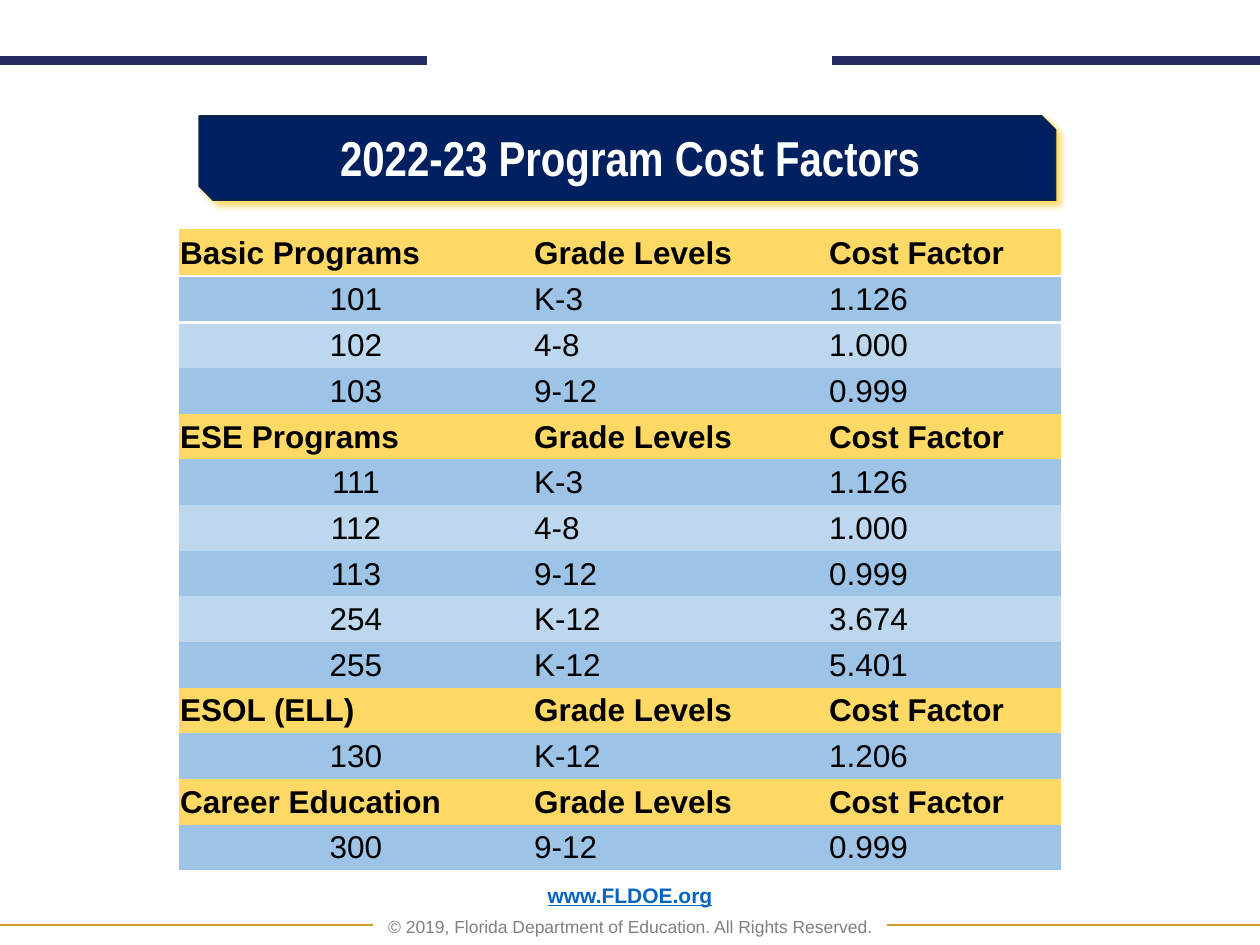
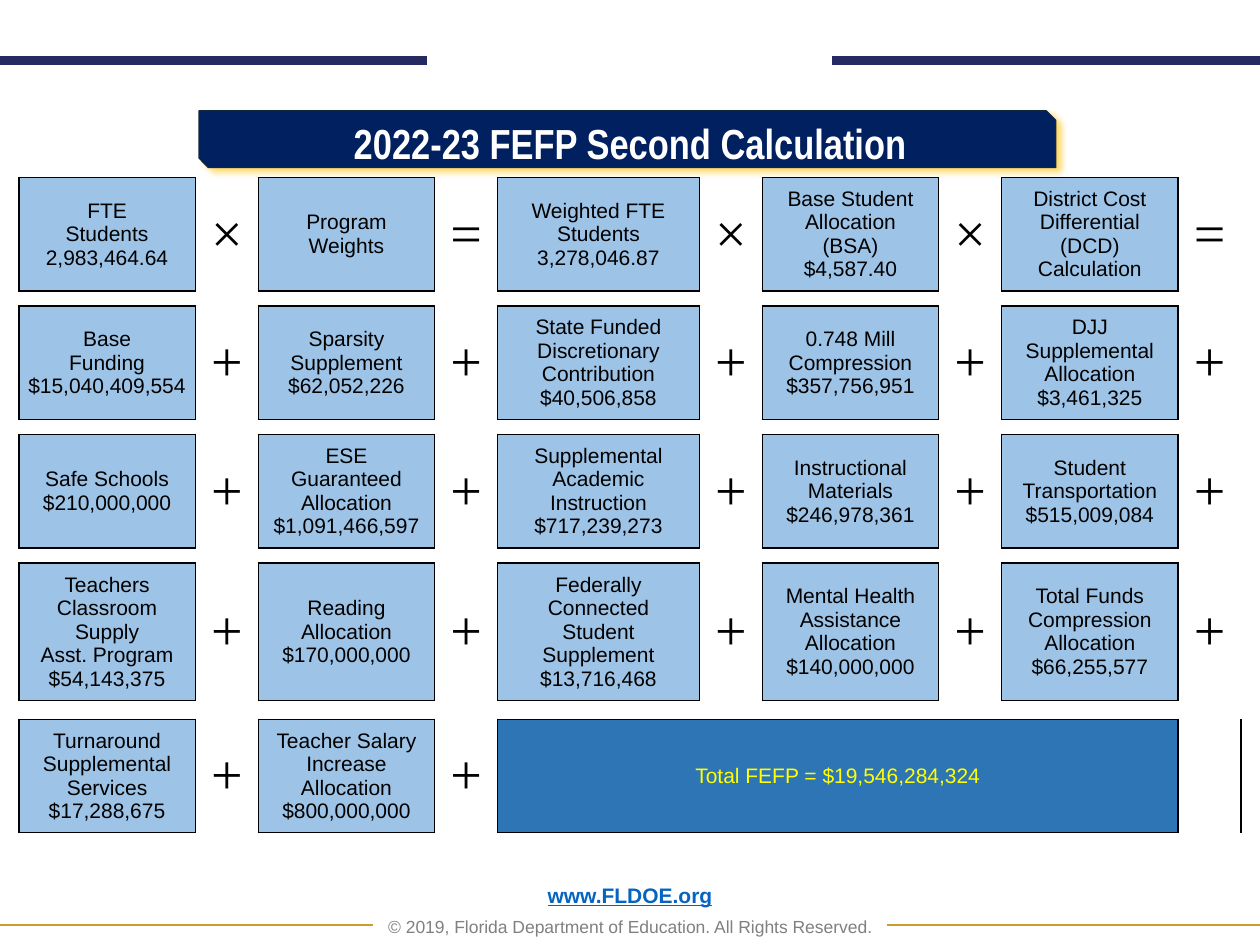
from dataclasses import dataclass
from typing import Optional

import lxml.etree
import pptx
import pptx.dml.color
import pptx.enum.shapes
import pptx.enum.text
import pptx.oxml.ns
import pptx.presentation
import pptx.shapes.graphfrm
import pptx.slide
import pptx.table
import pptx.text.text
import pptx.util

Inches = pptx.util.Inches
Pt = pptx.util.Pt
qn = pptx.oxml.ns.qn
CENTER = pptx.enum.text.PP_ALIGN.CENTER
LEFT = pptx.enum.text.PP_ALIGN.LEFT
NO_STYLE_NO_GRID = "{2D5ABB26-0587-4C30-8999-92F81FD0307C}"


@dataclass(frozen=True)
class Theme:
    navy: str = "002060"
    banner_edge: str = "0F273D"
    band: str = "262A63"
    gold_rule: str = "CD9D2C"
    gold: str = "FFD966"
    blue: str = "9DC3E6"
    pale_blue: str = "BDD7EE"
    total_blue: str = "2E75B6"
    yellow: str = "FFFF00"
    link: str = "0563C1"
    grey: str = "808080"
    black: str = "000000"
    white: str = "FFFFFF"
    body_font: str = "Arial"
    title_font: str = "Arial Narrow"
    operator_font: str = "Times New Roman"
    factor_size: float = 18
    box_size: float = 12
    operator_size: float = 32
    site_size: float = 12
    copyright_size: float = 10


THEME = Theme()


@dataclass(frozen=True)
class TextStyle:
    size: float
    color: str = THEME.black
    font: str = THEME.body_font
    bold: bool = False
    underline: bool = False


@dataclass(frozen=True)
class Rule:
    start: float
    end: float
    y: float
    color: str
    weight: float


@dataclass(frozen=True)
class Banner:
    title: str
    size: float
    top: float
    height: float
    text_top: float
    text_height: float


@dataclass(frozen=True)
class ProgramGroup:
    name: str
    factors: tuple[tuple[str, str, str], ...]


@dataclass(frozen=True)
class Term:
    """One box of the calculation and the operator that follows it."""
    text: str
    operator: str = "+"
    side_margin: float = 0.1


RULES = (
    Rule(0, 3.39, 0.48, THEME.band, 5),
    Rule(6.6, 10, 0.48, THEME.band, 5),
    Rule(0, 2.96, 7.34, THEME.gold_rule, 1),
    Rule(7.04, 10, 7.34, THEME.gold_rule, 1),
)

PROGRAM_GROUPS = (
    ProgramGroup("Basic Programs", (
        ("101", "K-3", "1.126"), ("102", "4-8", "1.000"), ("103", "9-12", "0.999"))),
    ProgramGroup("ESE Programs", (
        ("111", "K-3", "1.126"), ("112", "4-8", "1.000"), ("113", "9-12", "0.999"),
        ("254", "K-12", "3.674"), ("255", "K-12", "5.401"))),
    ProgramGroup("ESOL (ELL)", (("130", "K-12", "1.206"),)),
    ProgramGroup("Career Education", (("300", "9-12", "0.999"),)),
)

CALCULATION = (
    (Term("FTE\nStudents 2,983,464.64", "×"),
     Term("Program\nWeights", "="),
     Term("Weighted FTE\nStudents\n3,278,046.87", "×"),
     Term("Base Student Allocation (BSA)\n$4,587.40", "×"),
     Term("District Cost Differential (DCD) Calculation", "=")),
    (Term("Base\nFunding\n$15,040,409,554", side_margin=0.07),
     Term("Sparsity Supplement $62,052,226"),
     Term("State Funded Discretionary Contribution $40,506,858"),
     Term("0.748 Mill Compression $357,756,951"),
     Term("DJJ Supplemental Allocation $3,461,325")),
    (Term("Safe Schools $210,000,000"),
     Term("ESE Guaranteed Allocation $1,091,466,597"),
     Term("Supplemental Academic Instruction $717,239,273"),
     Term("Instructional Materials $246,978,361"),
     Term("Student Transportation $515,009,084")),
    (Term("Teachers Classroom Supply\nAsst. Program\n$54,143,375"),
     Term("Reading\nAllocation $170,000,000"),
     Term("Federally Connected Student Supplement\n$13,716,468"),
     Term("Mental Health Assistance Allocation\n$140,000,000"),
     Term("Total Funds Compression Allocation\n$66,255,577")),
    (Term("Turnaround Supplemental Services $17,288,675"),
     Term("Teacher Salary Increase Allocation\n$800,000,000"),
     Term("Total FEFP = $19,546,284,324", "")),
)


def rgb(color: str) -> pptx.dml.color.RGBColor:
    return pptx.dml.color.RGBColor.from_string(color)


def add_run(paragraph: pptx.text.text._Paragraph, text: str, style: TextStyle) -> None:
    run = paragraph.add_run()
    run.text = text
    run.font.name = style.font
    run.font.size = Pt(style.size)
    run.font.bold = style.bold
    run.font.underline = style.underline
    run.font.color.rgb = rgb(style.color)


def write(frame: pptx.text.text.TextFrame, text: str, style: TextStyle,
          align: pptx.enum.text.PP_ALIGN = CENTER) -> None:
    for index, line in enumerate(text.split("\n")):
        paragraph = frame.add_paragraph() if index else frame.paragraphs[0]
        paragraph.alignment = align
        add_run(paragraph, line, style)


def add_shared_parts(slide: pptx.slide.Slide) -> None:
    """Draw the bands and the footer, then move them to the slide's layout."""
    parts = []
    for rule in RULES:
        line = slide.shapes.add_connector(
            pptx.enum.shapes.MSO_CONNECTOR.STRAIGHT,
            Inches(rule.start), Inches(rule.y), Inches(rule.end), Inches(rule.y))
        line.line.color.rgb = rgb(rule.color)
        line.line.width = Pt(rule.weight)
        lxml.etree.SubElement(line.element.spPr, qn("a:effectLst"))
        parts.append(line)

    footer = slide.shapes.add_textbox(Inches(0.69), Inches(7.06), Inches(8.62), Inches(0.43))
    frame = footer.text_frame
    frame.word_wrap = True
    frame.auto_size = pptx.enum.text.MSO_AUTO_SIZE.NONE
    frame.vertical_anchor = pptx.enum.text.MSO_ANCHOR.BOTTOM
    site, rights = frame.paragraphs[0], frame.add_paragraph()
    add_run(site, "www.FLDOE.org",
            TextStyle(THEME.site_size, THEME.link, bold=True, underline=True))
    add_run(rights, "© 2019, Florida Department of Education. All Rights Reserved.",
            TextStyle(THEME.copyright_size, THEME.grey))
    for paragraph in (site, rights):
        paragraph.alignment = CENTER
        paragraph.line_spacing = 0.9
    rights.space_before = Pt(6)
    parts.append(footer)

    for part in parts:
        slide.slide_layout.shapes.element.append(part.element)


def add_banner(slide: pptx.slide.Slide, banner: Banner) -> None:
    plate = slide.shapes.add_shape(
        pptx.enum.shapes.MSO_SHAPE.SNIP_2_DIAG_RECTANGLE,
        Inches(1.58), Inches(banner.top), Inches(6.8), Inches(banner.height))
    plate.fill.solid()
    plate.fill.fore_color.rgb = rgb(THEME.navy)
    plate.line.color.rgb = rgb(THEME.banner_edge)
    plate.line.width = Pt(0.75)
    # Gold shadow towards the lower right
    plate.shadow.inherit = False
    shadow = lxml.etree.SubElement(
        plate.element.spPr.find(qn("a:effectLst")), qn("a:outerShdw"),
        blurRad=str(Pt(4)), dist=str(Pt(3)), dir=str(45 * 60000), algn="tl", rotWithShape="0")
    lxml.etree.SubElement(shadow, qn("a:srgbClr"), val=THEME.gold)

    title = slide.shapes.title
    title.element.addprevious(plate.element)
    title.left, title.top = Inches(1.75), Inches(banner.text_top)
    title.width, title.height = Inches(6.5), Inches(banner.text_height)
    frame = title.text_frame
    frame.word_wrap = True
    frame.auto_size = pptx.enum.text.MSO_AUTO_SIZE.NONE
    frame.vertical_anchor = pptx.enum.text.MSO_ANCHOR.TOP
    write(frame, banner.title,
          TextStyle(banner.size, THEME.white, THEME.title_font, bold=True))


def add_plain_table(slide: pptx.slide.Slide, left: float, top: float,
                    widths: list[float], heights: list[float]) -> pptx.table.Table:
    frame = slide.shapes.add_table(
        len(heights), len(widths), Inches(left), Inches(top),
        Inches(sum(widths)), Inches(sum(heights)))
    table = frame.table
    table.first_row = table.horz_banding = False
    next(frame.element.iter(qn("a:tableStyleId"))).text = NO_STYLE_NO_GRID
    for column, width in zip(table.columns, widths):
        column.width = Inches(width)
    for row, height in zip(table.rows, heights):
        row.height = Inches(height)
    return table


def set_margins(cell: pptx.table._Cell, left: float, top: float,
                right: float, bottom: float) -> None:
    cell.margin_left, cell.margin_top = Inches(left), Inches(top)
    cell.margin_right, cell.margin_bottom = Inches(right), Inches(bottom)


def add_border(cell: pptx.table._Cell, side: str, color: str, weight: float) -> None:
    """Add a border on side L, R, T or B; call in that order, before any fill."""
    edge = lxml.etree.SubElement(
        cell._tc.get_or_add_tcPr(), qn(f"a:ln{side}"), w=str(Pt(weight)))
    fill = lxml.etree.SubElement(edge, qn("a:solidFill"))
    lxml.etree.SubElement(fill, qn("a:srgbClr"), val=color)


def paint(cell: pptx.table._Cell, color: str) -> None:
    cell.fill.solid()
    cell.fill.fore_color.rgb = rgb(color)


def add_cost_factors(slide: pptx.slide.Slide) -> None:
    rows = []
    for group in PROGRAM_GROUPS:
        rows.append(((group.name, "Grade Levels", "Cost Factor"), THEME.gold))
        for index, factor in enumerate(group.factors):
            rows.append((factor, THEME.pale_blue if index % 2 else THEME.blue))

    top_rows = [0.37, 0.37]
    other_rows = len(rows) - len(top_rows)
    heights = top_rows + [(5.09 - sum(top_rows)) / other_rows] * other_rows
    table = add_plain_table(slide, 1.42, 1.82, [2.81, 2.34, 1.85], heights)
    for r, (texts, color) in enumerate(rows):
        heading = color == THEME.gold
        for c, text in enumerate(texts):
            cell = table.cell(r, c)
            set_margins(cell, 0.01, 0.01, 0.01, 0)
            cell.vertical_anchor = pptx.enum.text.MSO_ANCHOR.MIDDLE
            if r < 2:  # white line below the first heading
                add_border(cell, "T" if r else "B", THEME.white, 1.5)
            paint(cell, color)
            write(cell.text_frame, text, TextStyle(THEME.factor_size, bold=heading),
                  LEFT if heading or c else CENTER)


def box_at(row: int, column: int) -> Optional[tuple[int, int]]:
    """Name the box that covers a grid cell; gaps and operators have none."""
    if row % 2 or column % 2 or not (0 <= row <= 8 and 0 <= column <= 8):
        in_total = row == 8 and column in (5, 7)
        return (8, 4) if in_total else None
    return (8, 4) if row == 8 and column >= 4 else (row, column)


def add_calculation(slide: pptx.slide.Slide) -> None:
    widths = [1.4, 0.5, 1.4, 0.5, 1.6, 0.5, 1.4, 0.5, 1.4, 0.5]
    heights = [0.9, 0.12, 0.9, 0.12, 0.9, 0.12, 1.09, 0.15, 0.9]
    table = add_plain_table(slide, 0.15, 1.41, widths, heights)
    table.cell(8, 4).merge(table.cell(8, 8))

    # Outline every box, from both sides of each shared edge
    for r in range(len(heights)):
        for c in range(len(widths)):
            cell = table.cell(r, c)
            neighbours = {"L": (r, c - 1), "R": (r, c + cell.span_width),
                          "T": (r - 1, c), "B": (r + 1, c)}
            for side, place in neighbours.items():
                if box_at(r, c) != box_at(*place):
                    add_border(cell, side, THEME.black, 1)
            if r % 2:  # keep the gap rows thin
                set_margins(cell, 0, 0, 0, 0)
                lxml.etree.SubElement(
                    cell.text_frame.paragraphs[0]._p, qn("a:endParaRPr"), sz="100")

    operator_style = TextStyle(THEME.operator_size, font=THEME.operator_font)
    for r, terms in enumerate(CALCULATION):
        for c, term in enumerate(terms):
            box = table.cell(2 * r, 2 * c)
            total = not term.operator
            paint(box, THEME.total_blue if total else THEME.blue)
            set_margins(box, term.side_margin, 0.05, term.side_margin, 0.05)
            box.vertical_anchor = pptx.enum.text.MSO_ANCHOR.MIDDLE
            write(box.text_frame, term.text,
                  TextStyle(THEME.box_size, THEME.yellow if total else THEME.black))
            if not total:
                operator = table.cell(2 * r, 2 * c + 1)
                operator.vertical_anchor = pptx.enum.text.MSO_ANCHOR.MIDDLE
                write(operator.text_frame, term.operator, operator_style)


def main() -> None:
    deck = pptx.Presentation()
    deck.slide_width, deck.slide_height = Inches(10), Inches(7.5)
    title_only = deck.slide_layouts[5]

    # Program cost factors
    factors = deck.slides.add_slide(title_only)
    add_shared_parts(factors)
    add_banner(factors, Banner("2022-23 Program Cost Factors", 28, 0.92, 0.67, 0.96, 0.57))
    add_cost_factors(factors)

    # Second calculation
    calculation = deck.slides.add_slide(title_only)
    add_banner(calculation, Banner("2022-23 FEFP Second Calculation", 24, 0.88, 0.45, 0.88, 0.5))
    add_calculation(calculation)

    deck.save("out.pptx")


if __name__ == "__main__":
    main()
